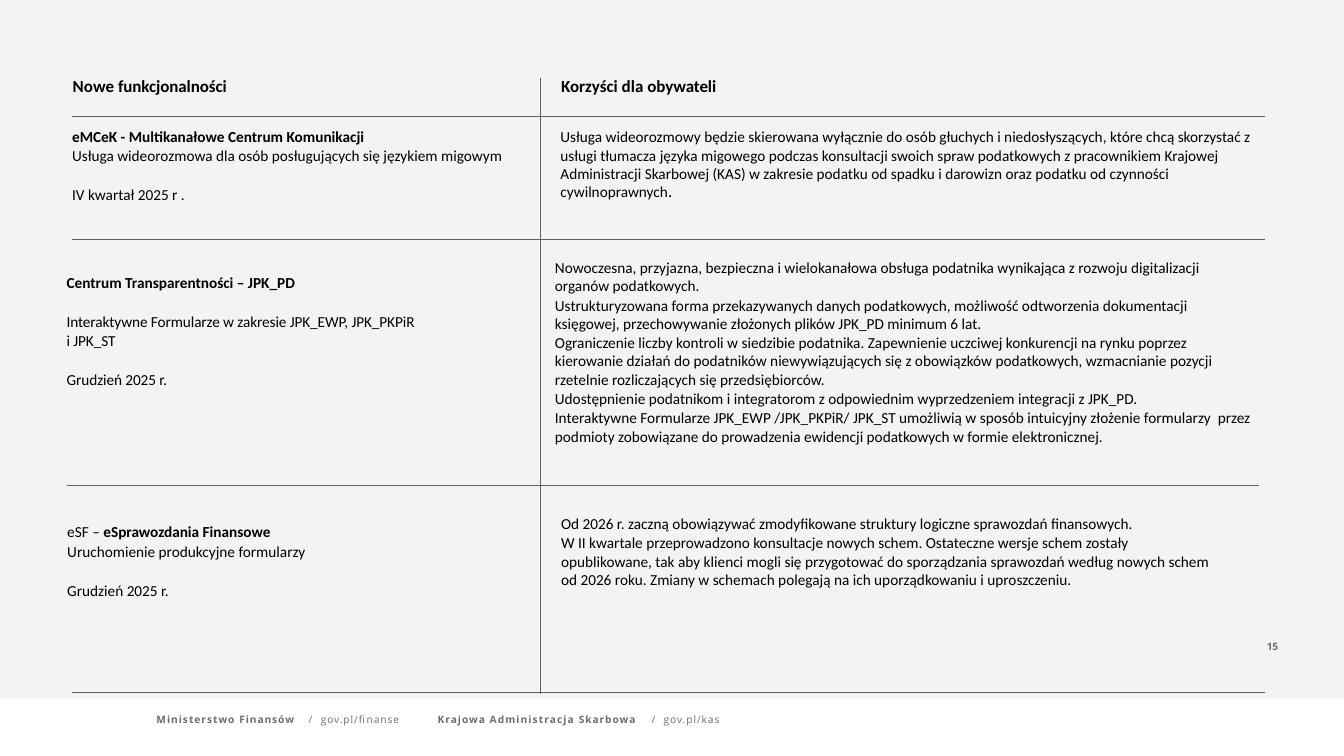
import pptx
import pptx.util
import pptx.enum.dml
import pptx.enum.shapes
import pptx.enum.text
import pptx.dml.color
import pptx.oxml
import pptx.oxml.ns

SCALE = 9144  # EMU per px, 100 px to the inch
WIDE, HIGH = 2199, 1237
INK = {"page": "FFFFFF", "panel": "F3F3F2", "text": "000000",
       "rule": "5D6162", "foot": "696D6E"}
LEAD = 21.8
SKIP = 23.8  # space before a paragraph that follows an empty line


def px(num):
    return pptx.util.Emu(num * SCALE)


def tint(name):
    return pptx.dml.color.RGBColor.from_string(INK[name])


def write(slide, box, paras, size, face="Calibri", ink="text", top=1, lead=None, tabs=()):
    """Add a text box; paras hold (space before, runs), runs hold (text, bold, spacing[, size])."""
    frame = slide.shapes.add_textbox(*map(px, box)).text_frame
    frame.word_wrap = True
    frame.auto_size = pptx.enum.text.MSO_AUTO_SIZE.SHAPE_TO_FIT_TEXT
    frame.margin_left = frame.margin_right = frame.margin_bottom = 0
    frame.margin_top = px(top)
    for num, (gap, runs) in enumerate(paras):
        para = frame.add_paragraph() if num else frame.paragraphs[0]
        para.space_before = pptx.util.Pt(gap)
        if lead:
            para.line_spacing = pptx.util.Pt(lead)
        if tabs:
            stops = pptx.oxml.ns.qn("a:tabLst")
            stops = para._p.get_or_add_pPr().makeelement(stops, {})
            para._p.get_or_add_pPr().append(stops)
            for stop in tabs:
                tab = stops.makeelement(pptx.oxml.ns.qn("a:tab"),
                                        {"pos": str(px(stop)), "algn": "l"})
                stops.append(tab)
        for text, bold, space, *own in runs:
            for part, line in enumerate(text.split("\n")):
                if part:
                    para.add_line_break()
                run = para.add_run()
                run.text = line
                run.font.name = face
                run.font.size = pptx.util.Pt(own[0] if own else size)
                run.font.bold = bold
                run.font.color.rgb = tint(ink)
                if space:
                    run._r.get_or_add_rPr().set("spc", str(round(space * 100)))


def rule(slide, x1, y1, x2, y2):
    kind = pptx.enum.shapes.MSO_CONNECTOR.STRAIGHT
    line = slide.shapes.add_connector(kind, px(x1), px(y1), px(x2), px(y2))
    line.line.color.rgb = tint("rule")
    line.line.width = pptx.util.Pt(0.25)
    props = line._element.spPr
    props.append(props.makeelement(pptx.oxml.ns.qn("a:effectLst"), {}))


def panel(slide, box):
    kind = pptx.enum.shapes.MSO_SHAPE.RECTANGLE
    back = slide.shapes.add_shape(kind, *map(px, box))
    back.shadow.inherit = False
    back.fill.solid()
    back.fill.fore_color.rgb = tint("panel")
    back.line.fill.background()


def footer(slide, box):
    x, y, wide, high = box
    units = [
        (0, 408, (249, 269), [("Ministerstwo ", True, 1.2), ("Finansów\t", True, 1.1)],
         "gov.pl/finanse"),
        (460, 469, (350, 370), [("Krajowa ", True, 1.2), ("Administracja ", True, 1.3),
                                ("Skarbowa\t", True, 1.1)], "gov.pl/kas"),
    ]
    for left, span, tabs, name, site in units:
        runs = name + [("/\t", False, -0.5), (site, False, 1.1)]
        write(slide, (x + left, y, span, high), [(2.2, runs)], 12,
              "Open Sans", "foot", 3, tabs=tabs)


def number(slide, box):
    write(slide, box, [(2.2, [("15", True, -0.5)])], 12, "Open Sans", "foot", 3)


def header(slide, box):
    x, y, wide, high = box
    heads = [(1, 289, "Nowe ", "funkcjonalności"),
             (800, 414, "Korzyści dla ", "obywateli")]
    for left, span, start, end in heads:
        runs = [(start, True, 0), (end, True, -0.1)]
        write(slide, (x + left, y, span, 35), [(1.1, runs)], 20, top=2)
    rule(slide, x, y + high, x + wide, y + high)


def row(slide, box, cells):
    """Fill one row with cells of (left, top, width, height, paras) and rule it off below."""
    x, y, wide, high = box
    for left, top, span, tall, paras in cells:
        write(slide, (x + left, y + top, span, tall), paras, 18, lead=LEAD)
    rule(slide, x, y + high, x + wide, y + high)


def plain(text, gap=1, space=0):
    return gap, [(text, False, space)]


ROWS = [
    ((118, 190, 1951, 201), [
        (0, 17, 740, 128, [
            (1, [("eMCeK - Multikanałowe Centrum Komunikacji", True, 0)]),
            plain("Usługa wideorozmowa dla osób posługujących się językiem migowym"),
            plain("IV kwartał 2025 r .", SKIP)]),
        (799, 17, 1153, 125, [
            (1, [("Usługa wideorozmowy będzie skierowana wyłącznie do osób głuchych i "
                  "niedosłyszących, które chcą skorzystać z usługi tłumacza języka migowego "
                  "podczas konsultacji swoich spraw podatkowych z pracownikiem Krajowej "
                  "Administracji Skarbowej (KAS) w zakresie podatku od spadku i darowizn "
                  "oraz podatku od czynności cywilnoprawnych", False, 0),
                 (".", False, 0, 20)])])]),
    ((109, 391, 1951, 402), [
        (0, 55, 740, 192, [
            (1, [("Centrum Transparentności – JPK_PD", True, 0)]),
            plain("Interaktywne Formularze w zakresie JPK_EWP, JPK_PKPiR", SKIP, -0.1),
            plain("i JPK_ST", 1, -0.1),
            plain("Grudzień 2025 r.", SKIP, -0.1)]),
        (799, 30, 1144, 313, [
            plain("Nowoczesna, przyjazna, bezpieczna i wielokanałowa obsługa podatnika "
                  "wynikająca z rozwoju digitalizacji organów podatkowych."),
            plain("Ustrukturyzowana forma przekazywanych danych podatkowych, możliwość "
                  "odtworzenia dokumentacji księgowej, przechowywanie złożonych plików "
                  "JPK_PD minimum 6 lat. \n"
                  "Ograniczenie liczby kontroli w siedzibie podatnika. Zapewnienie uczciwej "
                  "konkurencji na rynku poprzez kierowanie działań do podatników "
                  "niewywiązujących się z obowiązków podatkowych, wzmacnianie pozycji "
                  "rzetelnie rozliczających się przedsiębiorców."),
            plain("Udostępnienie podatnikom i integratorom z odpowiednim wyprzedzeniem "
                  "integracji z JPK_PD."),
            plain("Interaktywne Formularze JPK_EWP /JPK_PKPiR/ JPK_ST umożliwią w sposób "
                  "intuicyjny złożenie formularzy  przez podmioty zobowiązane do "
                  "prowadzenia ewidencji podatkowych w formie elektronicznej.")])]),
    ((118, 793, 1951, 340), [
        (-8, 61, 594, 128, [
            (1, [("eSF – ", False, 0), ("eSprawozdania Finansowe", True, 0)]),
            plain("Uruchomienie produkcyjne formularzy"),
            plain("Grudzień 2025 r.", SKIP)]),
        (800, 47, 1074, 125, [
            plain("Od 2026 r. zaczną obowiązywać zmodyfikowane struktury logiczne "
                  "sprawozdań finansowych."),
            plain("W II kwartale przeprowadzono konsultacje nowych schem. Ostateczne wersje "
                  "schem zostały opublikowane, tak aby klienci mogli się przygotować do "
                  "sporządzania sprawozdań według nowych schem od 2026 roku. Zmiany w "
                  "schemach polegają na ich uporządkowaniu i uproszczeniu.")])]),
]


def main():
    deck = pptx.Presentation()
    deck.slide_width, deck.slide_height = px(WIDE), px(HIGH)
    slide = deck.slides.add_slide(deck.slide_layouts[6])
    slide.background.fill.solid()
    slide.background.fill.fore_color.rgb = tint("page")
    panel(slide, (0, 0, WIDE, 1143))
    footer(slide, (256, 1165, 929, 26))
    number(slide, (2073, 1044, 42, 23))
    header(slide, (118, 122, 1951, 68))
    for box, cells in ROWS:
        row(slide, box, cells)
    rule(slide, 883, 127, 883, 1135)
    deck.save("out.pptx")


if __name__ == "__main__":
    main()
